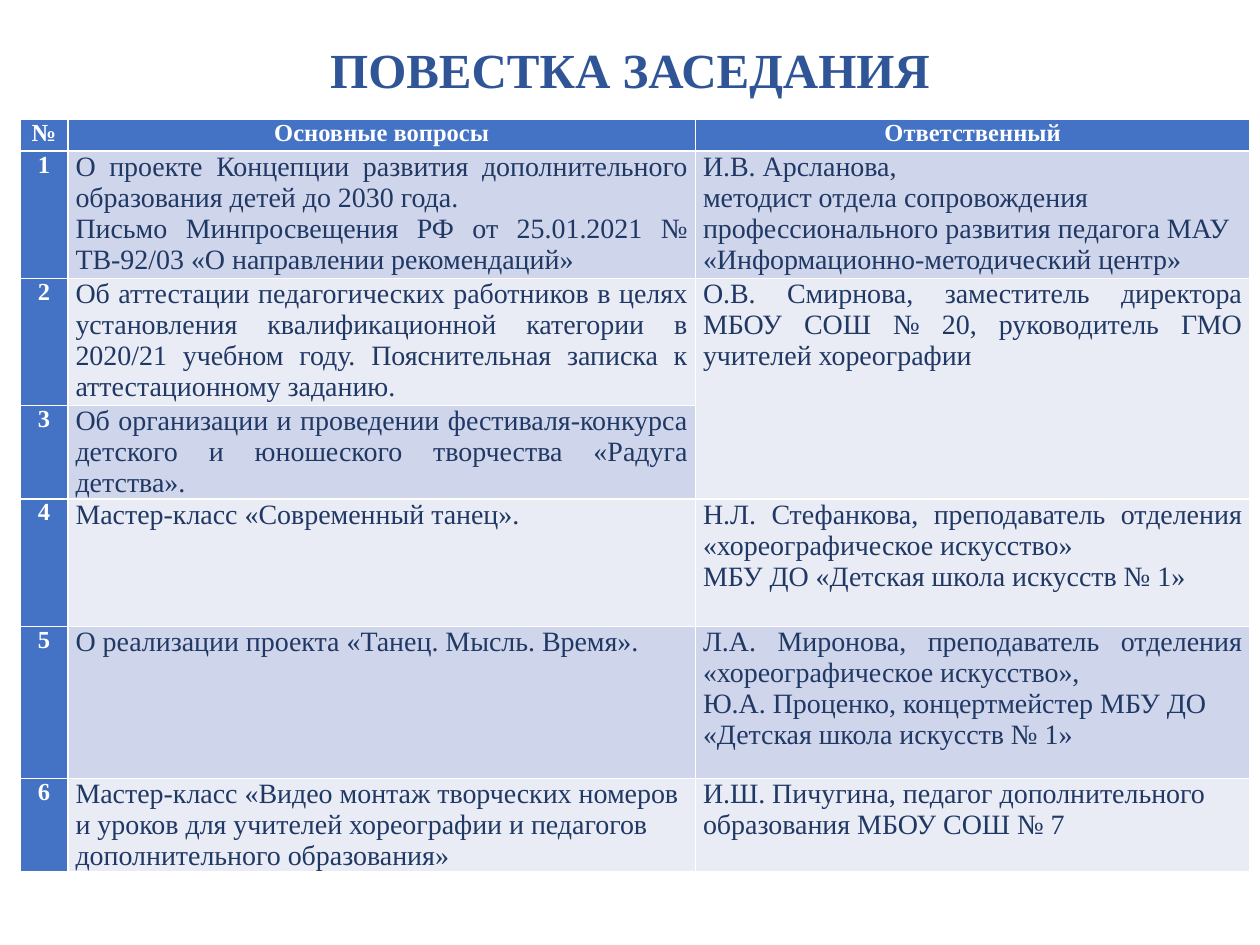
from pptx import Presentation
from pptx.dml.color import RGBColor
from pptx.enum import text
from pptx.util import Inches, Pt

FONT = "Times New Roman"
COLORS = {"title": "2F5597", "accent": "4472C4", "white": "FFFFFF",
          "body": "203864", "odd": "CFD5EA", "even": "E9EBF5"}
LEFT, CENTER, JUSTIFY = (text.PP_ALIGN.LEFT, text.PP_ALIGN.CENTER,
                         text.PP_ALIGN.JUSTIFY)

# Content: each agenda item is (question, its alignment, speaker, its alignment)
TITLE = "ПОВЕСТКА ЗАСЕДАНИЯ"
HEADERS = ["№", "Основные вопросы", "Ответственный"]
AGENDA = [
    ("О проекте Концепции развития дополнительного образования детей до 2030 года.\n"
     "Письмо Минпросвещения РФ от 25.01.2021 № ТВ-92/03 «О направлении рекомендаций»",
     JUSTIFY,
     "И.В. Арсланова,\n"
     "методист отдела сопровождения профессионального развития педагога МАУ "
     "«Информационно-методический центр»", LEFT),
    ("Об аттестации педагогических работников в целях установления квалификационной "
     "категории в 2020/21 учебном году. Пояснительная записка к аттестационному заданию.",
     JUSTIFY,
     "О.В. Смирнова, заместитель директора МБОУ СОШ № 20, руководитель ГМО "
     "учителей хореографии", JUSTIFY),
    ("Об организации и проведении фестиваля-конкурса детского и юношеского "
     "творчества «Радуга детства».", JUSTIFY, None, None),
    ("Мастер-класс «Современный танец».", JUSTIFY,
     "Н.Л. Стефанкова, преподаватель отделения «хореографическое искусство»\n"
     "МБУ ДО «Детская школа искусств № 1»", JUSTIFY),
    ("О реализации проекта «Танец. Мысль. Время».", JUSTIFY,
     "Л.А. Миронова, преподаватель отделения «хореографическое искусство»,\n"
     "Ю.А. Проценко, концертмейстер МБУ ДО\n"
     "«Детская школа искусств № 1»", JUSTIFY),
    ("Мастер-класс «Видео монтаж творческих номеров и уроков для учителей "
     "хореографии и педагогов дополнительного образования»", LEFT,
     "И.Ш. Пичугина, педагог дополнительного образования МБОУ СОШ № 7", LEFT),
]
COLUMN_WIDTHS = [0.38, 4.98, 4.4]
ROW_HEIGHTS = [0.25, 1.01, 1.01, 0.74, 1.01, 1.21, 0.74]


def format_text(frame, size, color, bold, alignment):
    for paragraph in frame.paragraphs:
        paragraph.alignment = alignment
        for run in paragraph.runs:
            run.font.name = FONT
            run.font.size = Pt(size)
            run.font.bold = bold
            run.font.color.rgb = RGBColor.from_string(COLORS[color])


def fill_cell(cell, content, fill, size=16, color="body", bold=False, alignment=LEFT):
    cell.margin_left = cell.margin_right = Inches(0.06)
    cell.margin_top = cell.margin_bottom = 0
    cell.fill.solid()
    cell.fill.fore_color.rgb = RGBColor.from_string(COLORS[fill])
    cell.text_frame.text = content
    format_text(cell.text_frame, size, color, bold, alignment)


def fill_heading(cell, content):
    fill_cell(cell, content, "accent", 14, "white", True, CENTER)


presentation = Presentation()
presentation.slide_width, presentation.slide_height = Inches(10), Inches(7.5)
slide = presentation.slides.add_slide(presentation.slide_layouts[5])

# Title
title = slide.shapes.title
title.left, title.top = Inches(0.69), Inches(0.26)
title.width, title.height = Inches(8.62), Inches(0.64)
title.text_frame.text = TITLE
title.text_frame.vertical_anchor = text.MSO_ANCHOR.MIDDLE
title.text_frame.paragraphs[0].line_spacing = 0.9
format_text(title.text_frame, 28, "title", True, CENTER)

# Agenda table; the default style draws the white cell borders
table = slide.shapes.add_table(
    len(ROW_HEIGHTS), len(COLUMN_WIDTHS), Inches(0.16), Inches(0.95),
    Inches(sum(COLUMN_WIDTHS)), Inches(sum(ROW_HEIGHTS))).table
table.first_col = True
for column, width in zip(table.columns, COLUMN_WIDTHS):
    column.width = Inches(width)
for row, height in zip(table.rows, ROW_HEIGHTS):
    row.height = Inches(height)

for index, header in enumerate(HEADERS):
    fill_heading(table.cell(0, index), header)

for number, (question, question_align, speaker, speaker_align) in enumerate(AGENDA, 1):
    band = "odd" if number % 2 else "even"
    fill_heading(table.cell(number, 0), str(number))
    fill_cell(table.cell(number, 1), question, band, alignment=question_align)
    if speaker:
        fill_cell(table.cell(number, 2), speaker, band, alignment=speaker_align)
    else:  # the speaker of the previous item also covers this one
        table.cell(number - 1, 2).merge(table.cell(number, 2))

presentation.save("out.pptx")
